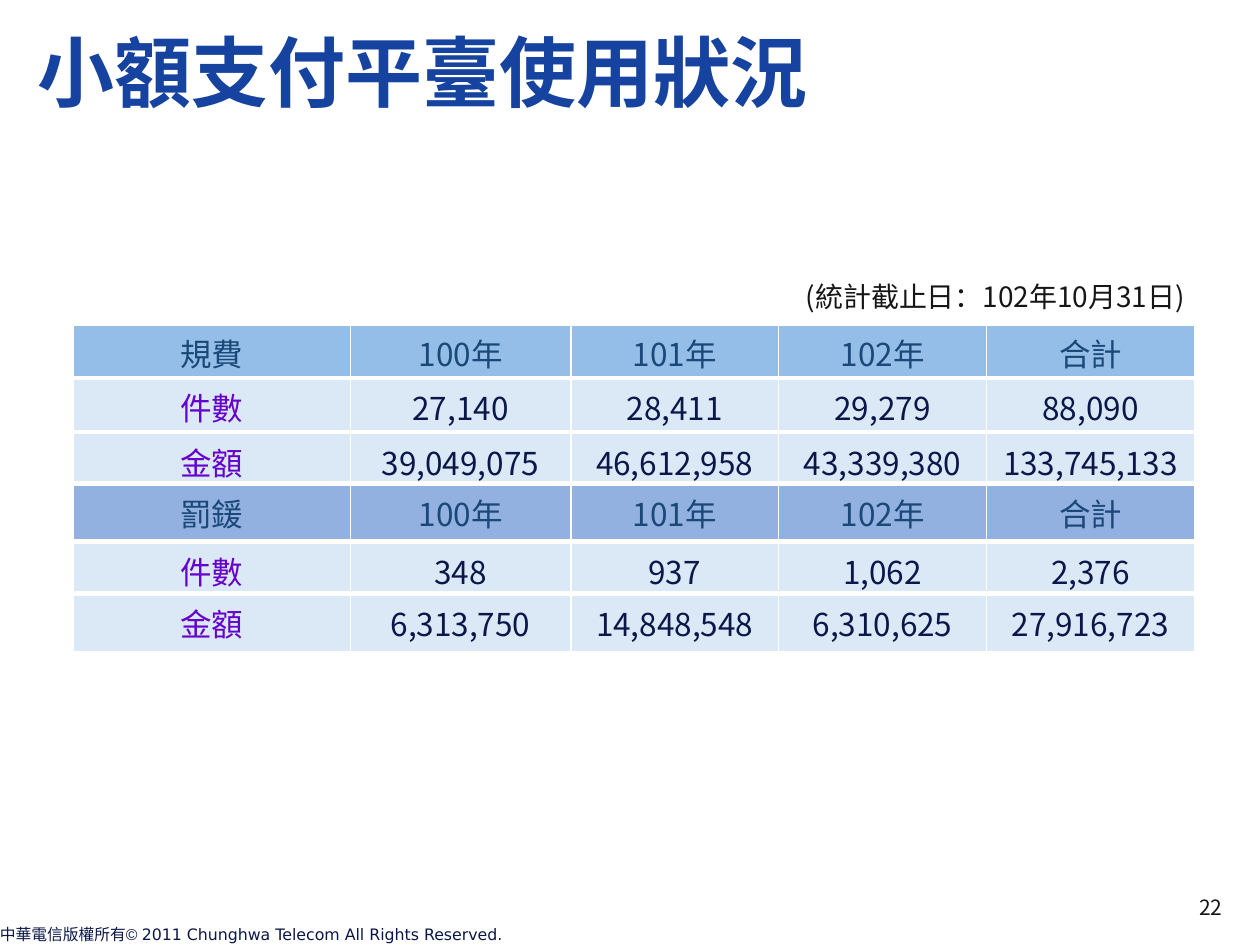
from pptx import Presentation, util as u
from pptx.dml.color import RGBColor
from pptx.enum import text
from pptx.oxml.ns import qn
from lxml import etree

COLORS = {
    "title": "15439F", "ink": "161616", "navy": "0B1749", "header": "1A4979",
    "label": "6600CC", "fee_band": "94BEE8", "fine_band": "92B1E0",
    "body_band": "DBE9F7", "border": "FFFFFF",
}
SANS = "Noto Sans CJK SC"
FOOTER_FONT = "DejaVu Sans"
ALIGN = text.PP_ALIGN

YEARS = ["100年", "101年", "102年", "合計"]
ROWS = [
    ("規費", YEARS, "fee_band"),
    ("件數", ["27,140", "28,411", "29,279", "88,090"], "body_band"),
    ("金額", ["39,049,075", "46,612,958", "43,339,380", "133,745,133"], "body_band"),
    ("罰鍰", YEARS, "fine_band"),
    ("件數", ["348", "937", "1,062", "2,376"], "body_band"),
    ("金額", ["6,313,750", "14,848,548", "6,310,625", "27,916,723"], "body_band"),
]
COLUMN_WIDTHS = [2.2, 1.75, 1.65, 1.65, 1.65]
ROW_HEIGHTS = [0.43, 0.43, 0.41, 0.46, 0.41, 0.46]


class SlideBuilder:
    """Holds the text style and the slide being filled."""

    def __init__(self, slide):
        self.slide = slide

    def add_run(self, paragraph, wording, size, color, font=SANS, bold=False):
        run = paragraph.add_run()
        run.text = wording
        run.font.size = u.Pt(size)
        run.font.bold = bold
        run.font.name = font
        run.font.color.rgb = RGBColor.from_string(COLORS[color])
        east_asian = etree.SubElement(run.font._element, qn("a:ea"))
        east_asian.set("typeface", SANS)

    def add_text(self, box, runs, size, color, align=ALIGN.LEFT,
                 anchor=text.MSO_ANCHOR.TOP, bold=False):
        """Runs are (wording, font) pairs on one line."""
        shape = self.slide.shapes.add_textbox(*map(u.Inches, box))
        frame = shape.text_frame
        frame.word_wrap = True
        frame.vertical_anchor = anchor
        paragraph = frame.paragraphs[0]
        paragraph.alignment = align
        for wording, font in runs:
            self.add_run(paragraph, wording, size, color, font, bold)

    def add_border(self, cell, side, width):
        properties = cell._tc.get_or_add_tcPr()
        line = etree.SubElement(properties, qn(f"a:{side}"), w=str(u.Pt(width)))
        fill = etree.SubElement(line, qn("a:solidFill"))
        etree.SubElement(fill, qn("a:srgbClr"), val=COLORS["border"])

    def fill_cell(self, cell, wording, color, band, bottom_width):
        borders = {"lnL": 1, "lnR": 1, "lnT": 3, "lnB": bottom_width}
        for side, width in borders.items():
            self.add_border(cell, side, width)
        cell.fill.solid()
        cell.fill.fore_color.rgb = RGBColor.from_string(COLORS[band])
        paragraph = cell.text_frame.paragraphs[0]
        paragraph.alignment = ALIGN.CENTER
        self.add_run(paragraph, wording, 18, color)

    def add_table(self, left, top):
        size = (sum(COLUMN_WIDTHS), sum(ROW_HEIGHTS))
        table = self.slide.shapes.add_table(
            len(ROWS), len(COLUMN_WIDTHS), *map(u.Inches, (left, top, *size))).table
        for column, width in zip(table.columns, COLUMN_WIDTHS):
            column.width = u.Inches(width)
        for row, height in zip(table.rows, ROW_HEIGHTS):
            row.height = u.Inches(height)
        for index, (label, values, band) in enumerate(ROWS):
            is_body = band == "body_band"
            bottom_width = 1 if index == len(ROWS) - 1 else 3
            for position, wording in enumerate([label, *values]):
                if not is_body:
                    color = "header"
                else:
                    color = "navy" if position else "label"
                self.fill_cell(table.cell(index, position), wording, color,
                               band, bottom_width)


def main():
    presentation = Presentation()
    presentation.slide_width = u.Inches(10)
    presentation.slide_height = u.Inches(7.5)
    slide = presentation.slides.add_slide(presentation.slide_layouts[6])
    builder = SlideBuilder(slide)

    builder.add_text((9.42, 7.05, 0.44, 0.3), [("22", SANS)], 12, "ink")
    builder.add_text(
        (-0.1, 7.29, 5.59, 0.56),
        [("中華電信版權所有", FOOTER_FONT), ("© ", "Arial"),
         ("2011 Chunghwa Telecom All Rights Reserved.", FOOTER_FONT)],
        9, "navy")
    builder.add_text((0.2, 0.13, 7.48, 0.87), [("小額支付平臺使用狀況", SANS)],
                     44, "title", anchor=text.MSO_ANCHOR.MIDDLE, bold=True)
    builder.add_text((0.6, 2.17, 8.9, 0.37),
                     [("(統計截止日：102年10月31日)", SANS)],
                     16, "ink", align=ALIGN.RIGHT)
    builder.add_table(0.58, 2.57)
    presentation.save("out.pptx")


if __name__ == "__main__":
    main()
